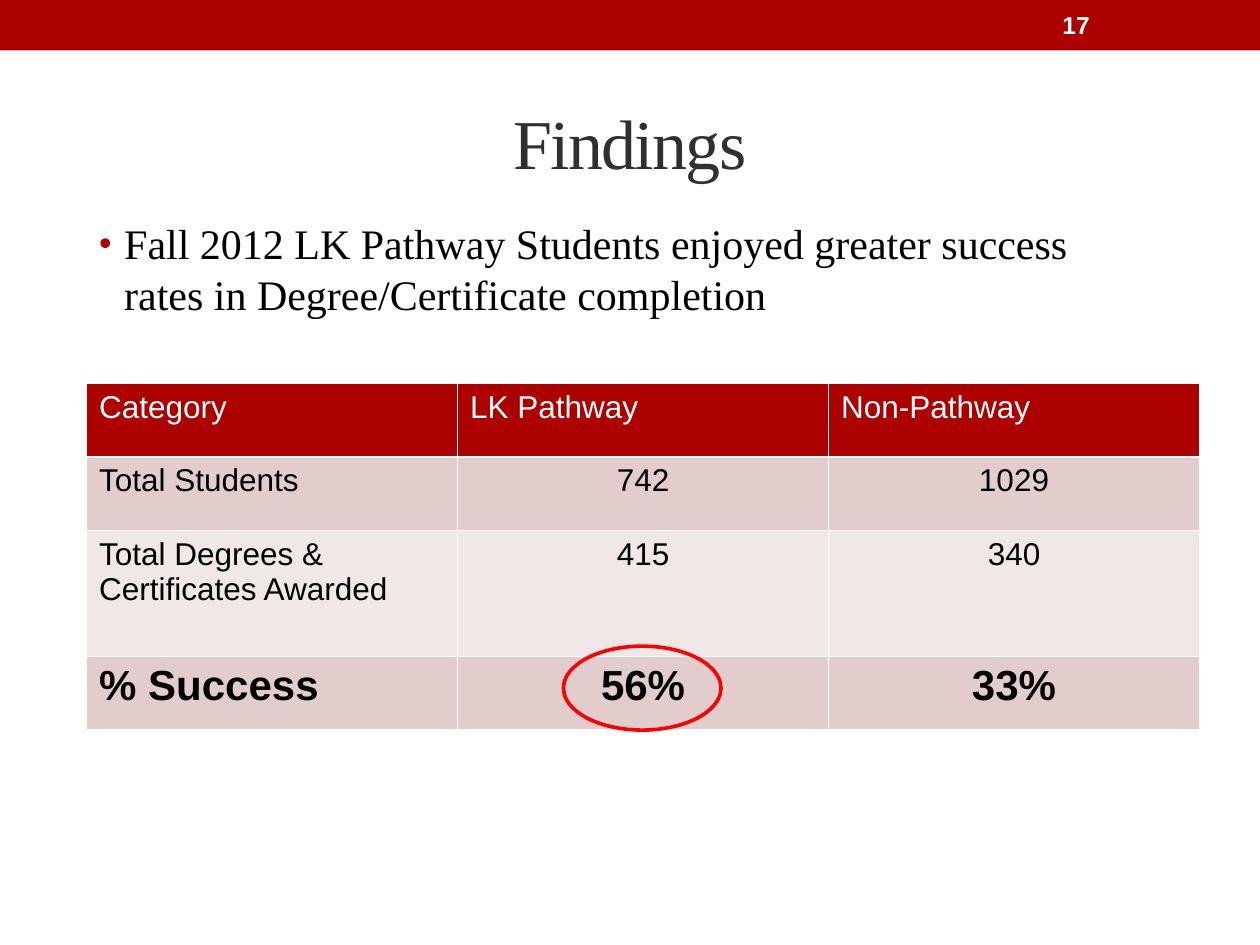
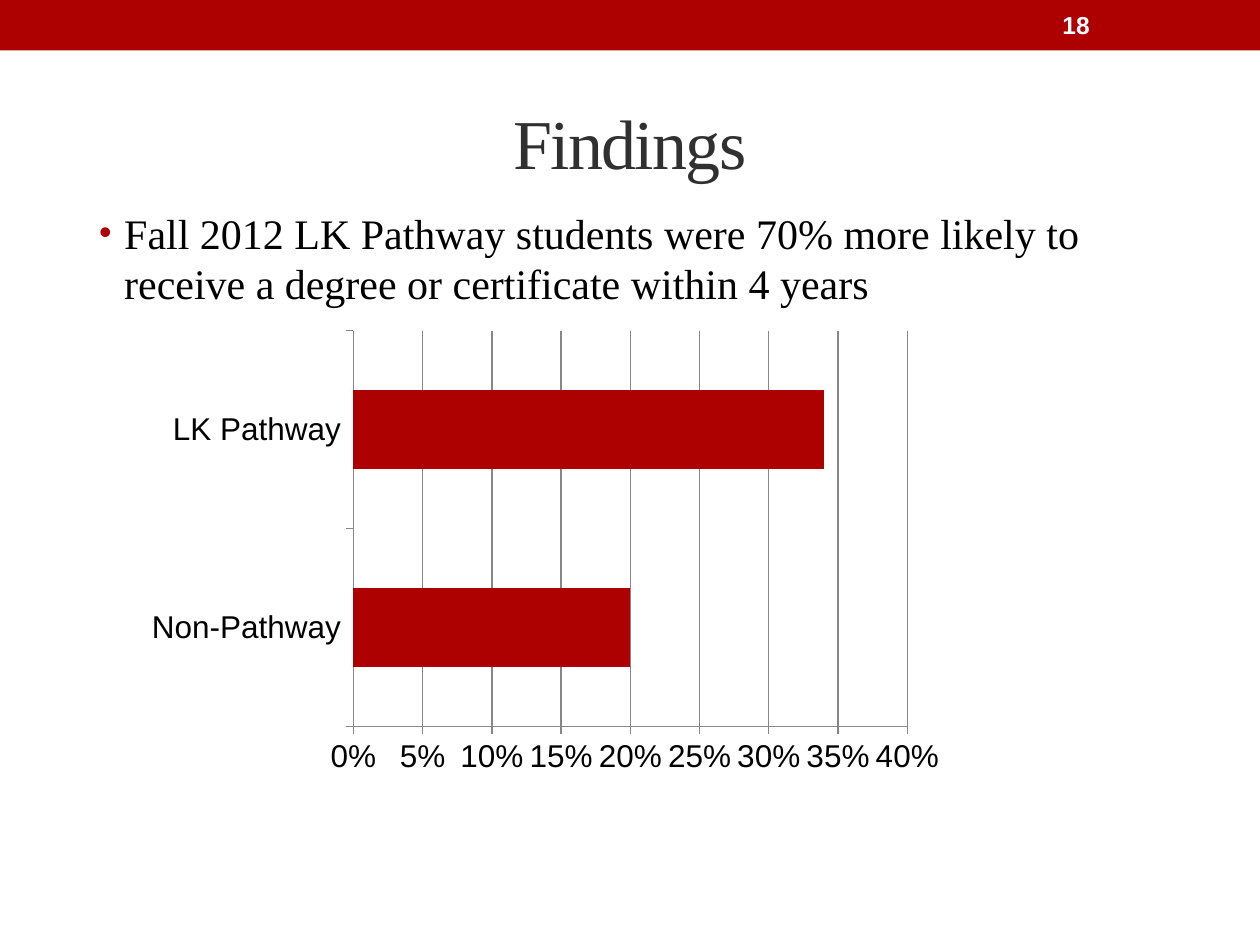
"""Build two findings slides: a completion table and a completion-rate bar chart."""
from dataclasses import dataclass

from lxml.etree import SubElement
from pptx import Presentation
from pptx.chart.data import CategoryChartData
from pptx.dml.color import RGBColor as RGB
from pptx.enum.chart import XL_CHART_TYPE as ChartType, XL_TICK_MARK as Tick
from pptx.enum.shapes import MSO_SHAPE as Shape
from pptx.enum.text import MSO_ANCHOR as Anchor, PP_ALIGN as Align
from pptx.oxml import parse_xml
from pptx.oxml.ns import nsdecls, qn
from pptx.util import Pt


@dataclass(frozen=True)
class Theme:
    red: RGB = RGB(0xAD, 0x01, 0x01)
    ring: RGB = RGB(0xFF, 0x00, 0x00)
    white: RGB = RGB(0xFF, 0xFF, 0xFF)
    black: RGB = RGB(0x00, 0x00, 0x00)
    heading: RGB = RGB(0x30, 0x30, 0x30)
    grid: RGB = RGB(0x87, 0x87, 0x87)
    band_dark: RGB = RGB(0xE3, 0xCC, 0xCC)
    band_light: RGB = RGB(0xF1, 0xE7, 0xE7)
    serif: str = "Times New Roman"
    sans: str = "Arial"
    title_size: int = 40
    body_size: int = 24
    label_size: int = 18
    number_size: int = 14


theme = Theme()


def write(frame, text, *, size, color, font=theme.sans, bold=False, align=Align.LEFT,
          anchor=Anchor.TOP, tracking=0, bullet=False):
    frame.word_wrap = True
    frame.vertical_anchor = anchor
    paragraph = frame.paragraphs[0]
    paragraph.alignment = align
    run = paragraph.add_run()
    run.text = text
    run.font.size, run.font.name, run.font.bold = Pt(size), font, bold
    run.font.color.rgb = color
    if tracking:
        run.font._element.set("spc", str(tracking * 100))
    if bullet:
        paragraph.space_before = Pt(2)
        properties = paragraph._p.get_or_add_pPr()
        properties.set("marL", str(Pt(14.4)))
        properties.set("indent", str(-Pt(14.4)))
        bullet_color = SubElement(properties, qn("a:buClr"))
        SubElement(bullet_color, qn("a:srgbClr"), val=str(theme.red))
        SubElement(properties, qn("a:buSzPct"), val="85000")
        SubElement(properties, qn("a:buFont"), typeface=theme.sans)
        SubElement(properties, qn("a:buChar"), char="•")


deck = Presentation()
deck.slide_width, deck.slide_height = Pt(720), Pt(540)

program, others = "LK Pathway", "Non-Pathway"
findings = [
    ("17", f"Fall 2012 {program} Students enjoyed greater success rates in "
           "Degree/Certificate completion", (49.5, 121, 588, 72)),
    ("18", f"Fall 2012 {program} students were 70% more likely to receive a degree "
           "or certificate within 4 years", (49.5, 115, 633, 343)),
]
slides = []
for number, finding, finding_box in findings:
    slide = deck.slides.add_slide(deck.slide_layouts[6])
    slides.append(slide)
    band = slide.shapes.add_shape(Shape.RECTANGLE, 0, 0, Pt(720), Pt(28.8))
    band.shadow.inherit = False
    band.fill.solid()
    band.fill.fore_color.rgb = theme.red
    band.line.fill.background()
    for text, box, style in [
        (finding, finding_box, dict(size=theme.body_size, color=theme.black,
                                    font=theme.serif, bullet=True)),
        ("Findings", (36, 42, 648, 78), dict(size=theme.title_size, color=theme.heading,
                                             font=theme.serif, align=Align.CENTER,
                                             anchor=Anchor.MIDDLE, tracking=-1)),
        (number, (600, 1, 84, 26), dict(size=theme.number_size, color=theme.white,
                                        bold=True, anchor=Anchor.MIDDLE)),
    ]:
        textbox = slide.shapes.add_textbox(*map(Pt, box))
        write(textbox.text_frame, text, **style)

table_slide, chart_slide = slides

completion = [
    ("Category", program, others),
    ("Total Students", "742", "1029"),
    ("Total Degrees & Certificates Awarded", "415", "340"),
    ("% Success", "56%", "33%"),
]
row_fills = [theme.red, theme.band_dark, theme.band_light, theme.band_dark]
row_heights = [42, 42, 72, 42]
table = table_slide.shapes.add_table(4, 3, Pt(49.5), Pt(219.2), Pt(636), Pt(198)).table
for column in table.columns:
    column.width = Pt(212)
for r, (values, fill, height) in enumerate(zip(completion, row_fills, row_heights)):
    table.rows[r].height = Pt(height)
    header, success = r == 0, r == len(completion) - 1
    for c, value in enumerate(values):
        cell = table.cell(r, c)
        write(cell.text_frame, value, bold=success,
              size=theme.body_size if success else theme.label_size,
              color=theme.white if header else theme.black,
              align=Align.LEFT if header or c == 0 else Align.CENTER)
        cell_properties = cell._tc.get_or_add_tcPr()
        for edge in ("lnL", "lnR", "lnT", "lnB"):
            border = SubElement(cell_properties, qn(f"a:{edge}"), w=str(Pt(1)))
            border_fill = SubElement(border, qn("a:solidFill"))
            SubElement(border_fill, qn("a:srgbClr"), val=str(theme.white))
        cell.fill.solid()
        cell.fill.fore_color.rgb = fill

success_ring = table_slide.shapes.add_shape(Shape.OVAL, Pt(322), Pt(369.2), Pt(90), Pt(48))
success_ring.shadow.inherit = False
success_ring.fill.background()
success_ring.line.color.rgb = theme.ring
success_ring.line.width = Pt(2.08)

rates = CategoryChartData(number_format="0%")
rates.categories = [others, program]
rates.add_series("Series 1", (0.2, 0.34))
chart_width, chart_height = 462, 278
chart = chart_slide.shapes.add_chart(ChartType.BAR_STACKED, Pt(84), Pt(188.6),
                                     Pt(chart_width), Pt(chart_height), rates).chart
chart.has_title = False
chart.has_legend = False
chart.font.size, chart.font.name = Pt(theme.label_size), theme.sans
chart.font.color.rgb = theme.black

bars = chart.plots[0]
bars.gap_width, bars.overlap, bars.vary_by_categories = 150, 100, False
bars.series[0].format.fill.solid()
bars.series[0].format.fill.fore_color.rgb = theme.red

rate_axis = chart.value_axis
rate_axis.minimum_scale, rate_axis.maximum_scale, rate_axis.major_unit = 0, 0.4, 0.05
rate_axis.tick_labels.number_format = "0%"
rate_axis.tick_labels.number_format_is_linked = False
rate_axis.has_major_gridlines = True
for axis in (rate_axis, chart.category_axis):
    axis.major_tick_mark, axis.minor_tick_mark = Tick.OUTSIDE, Tick.NONE
for ruled in (rate_axis, rate_axis.major_gridlines, chart.category_axis):
    ruled.format.line.color.rgb = theme.grid
    ruled.format.line.width = Pt(0.75)

plot_area = chart._chartSpace.find(".//" + qn("c:plotArea"))
for automatic in plot_area.findall(qn("c:layout")):
    plot_area.remove(automatic)
plot_area.insert(0, parse_xml(
    f'<c:layout {nsdecls("c")}><c:manualLayout><c:layoutTarget val="inner"/>'
    '<c:xMode val="edge"/><c:yMode val="edge"/>'
    f'<c:x val="{118 / chart_width}"/><c:y val="0"/>'
    f'<c:w val="{316.5 / chart_width}"/><c:h val="{226.5 / chart_height}"/>'
    '</c:manualLayout></c:layout>'))

deck.save("out.pptx")
